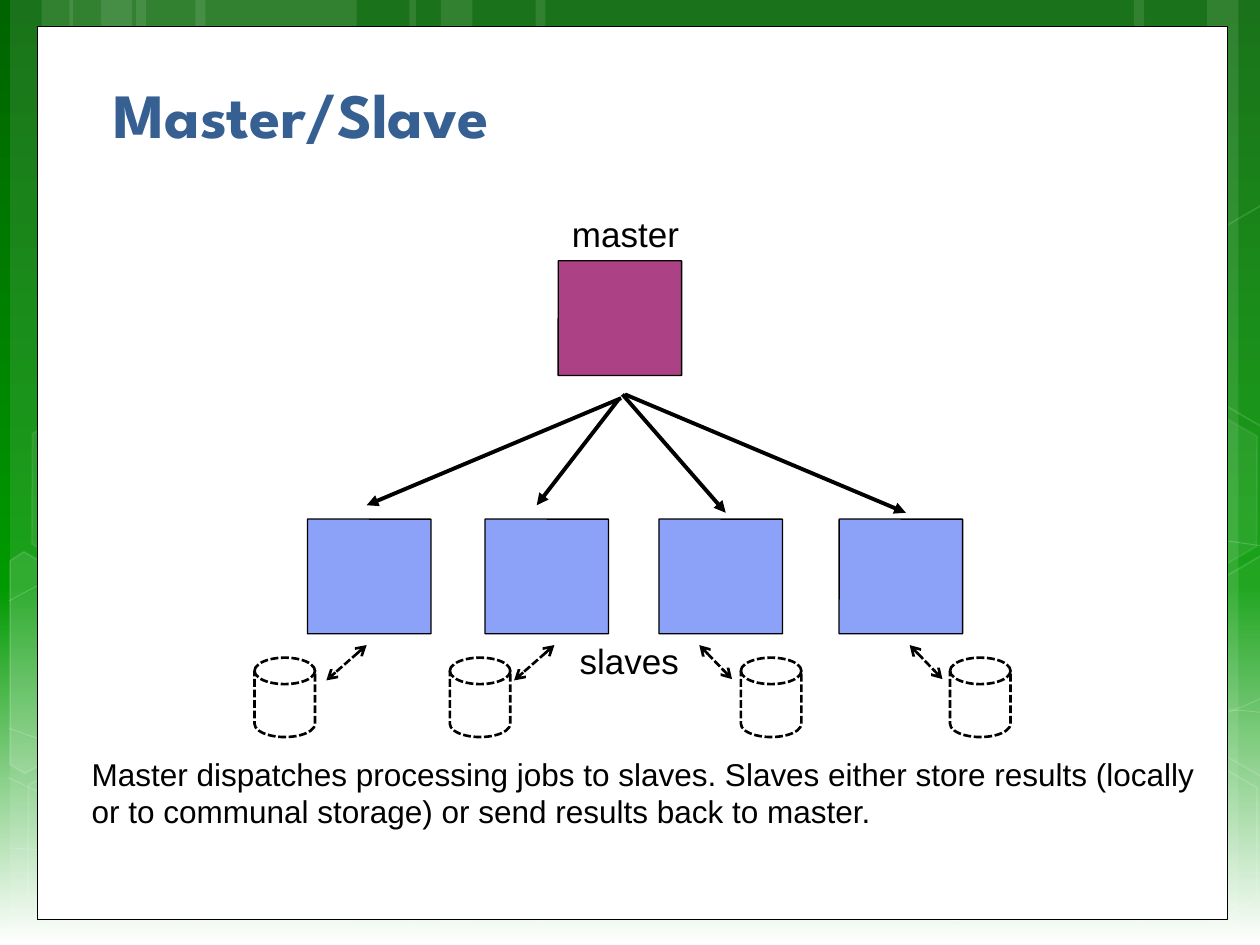
"""Build the Master/Slave architecture slide."""
from copy import deepcopy

from lxml import etree
from pptx import Presentation
from pptx.dml.color import RGBColor
from pptx.enum.dml import MSO_LINE
from pptx.enum.shapes import MSO_CONNECTOR, MSO_SHAPE
from pptx.enum.text import MSO_ANCHOR, PP_ALIGN
from pptx.oxml.ns import qn
from pptx.util import Inches, Pt

RECTANGLE = MSO_SHAPE.RECTANGLE
ROUNDED = MSO_SHAPE.ROUNDED_RECTANGLE
HEXAGON = MSO_SHAPE.HEXAGON
DISK = MSO_SHAPE.FLOWCHART_MAGNETIC_DISK
STRAIGHT = MSO_CONNECTOR.STRAIGHT
DASHED = MSO_LINE.SQUARE_DOT
LEFT, CENTER = PP_ALIGN.LEFT, PP_ALIGN.CENTER
TOP, BOTTOM = MSO_ANCHOR.TOP, MSO_ANCHOR.BOTTOM

WHITE = RGBColor(0xFF, 0xFF, 0xFF)
BLACK = RGBColor(0, 0, 0)
DARK_GREEN = RGBColor(0, 0x64, 0)
GREEN = RGBColor(0, 0x99, 0)
TITLE_BLUE = RGBColor(0x37, 0x60, 0x92)
SLAVE_BLUE = RGBColor(0x8C, 0xA1, 0xF8)
MASTER_PURPLE = RGBColor(0xAD, 0x41, 0x86)

WIDTH, HEIGHT = 10, 7.5
BOX_WIDTH, BOX_HEIGHT = 0.98, 0.91
MASTER_ROW, SLAVE_ROW, DISK_ROW = 2.07, 4.12, 5.22
SLAVE_COLUMNS = (2.44, 3.85, 5.23, 6.66)
DISK_COLUMNS = (2.02, 3.57, 5.88, 7.54)


def style(shape, fill=None, fill_alpha=100, line=None, width=1, line_alpha=100):
    shape.shadow.inherit = False
    for color, alpha, target, place in (
        (fill, fill_alpha, shape.fill, "a:solidFill/a:srgbClr"),
        (line, line_alpha, shape.line.fill, "a:ln/a:solidFill/a:srgbClr"),
    ):
        if color is None:
            target.background()
            continue
        target.solid()
        target.fore_color.rgb = color
        if alpha < 100:
            element = shape._element.spPr.xpath(place)[0]
            etree.SubElement(element, qn("a:alpha")).set("val", str(alpha * 1000))
    if line is not None:
        shape.line.width = Pt(width)


def add_arrow(start, end, width, tail, head=None, dash=None):
    connector = slide.shapes.add_connector(STRAIGHT, *map(Inches, start + end))
    connector.line.color.rgb = BLACK
    connector.line.width = Pt(width)
    if dash is not None:
        connector.line.dash_style = dash
    properties = connector._element.spPr
    line = properties.find(qn("a:ln"))
    for tag, kind in (("a:headEnd", head), ("a:tailEnd", tail)):
        if kind:
            etree.SubElement(line, qn(tag)).set("type", kind)
    etree.SubElement(properties, qn("a:effectLst"))


presentation = Presentation()
presentation.slide_width = Inches(WIDTH)
presentation.slide_height = Inches(HEIGHT)
slide = presentation.slides.add_slide(presentation.slide_layouts[6])

background = slide.background.fill
background.gradient()
background.gradient_angle = 270
stop_list = slide._element.xpath(".//a:gsLst")[0]
stop_list.append(deepcopy(stop_list[-1]))
for stop, position, color in zip(
    background.gradient_stops, (0, 0.62, 1), (DARK_GREEN, GREEN, WHITE)
):
    stop.position = position
    stop.color.rgb = color

bands = (
    (1.08, 1.75), (0.08, 0.5), (0.33, 0.83), (1.55, 1.75), (0.55, 0.5), (0.8, 0.83),
    (7.33, 1.75), (9.58, 0.5), (9, 0.83), (4.25, 3.08), (3.25, 0.5), (3.5, 0.83),
)
for left, width in bands:
    band = slide.shapes.add_shape(
        RECTANGLE, Inches(left), 0, Inches(width), Inches(HEIGHT)
    )
    style(band, WHITE, 10)

curves = (
    ((0.07, 6.73), (0.61, 6.76), (1.15, 6.79), (1.9, 6.78), (2.65, 6.77),
     (3.58, 6.75), (4.58, 6.65), (5.58, 6.55), (7, 6.36), (7.92, 6.17),
     (8.83, 5.98), (9.77, 5.68), (10.07, 5.51)),
    ((0.07, 4.77), (0.36, 4.61), (0.65, 4.46), (1.21, 4.31), (1.78, 4.16),
     (2.59, 3.94), (3.47, 3.87), (4.36, 3.8), (5.44, 3.79), (6.54, 3.87),
     (7.64, 3.95), (9.47, 4.26), (10.07, 4.34)),
    ((0.06, 6.17), (1.27, 6.72), (2.47, 7.27), (3.34, 7.49)),
    ((0.07, 5.78), (0.38, 5.89), (0.7, 6), (1.28, 6.16), (1.86, 6.31),
     (2.73, 6.56), (3.57, 6.73), (4.4, 6.9), (5.45, 7.08), (6.28, 7.18),
     (7.11, 7.29), (8, 7.33), (8.53, 7.36), (9.05, 7.4), (9.19, 7.38),
     (9.45, 7.38), (9.71, 7.37), (9.89, 7.35), (10.07, 7.34)),
    ((2.42, 7.49), (2.6, 7.29), (2.78, 7.09), (3.02, 6.91), (3.26, 6.73),
     (3.6, 6.53), (3.88, 6.39), (4.16, 6.25), (4.33, 6.19), (4.7, 6.09),
     (5.06, 5.99), (5.73, 5.85), (6.08, 5.78), (6.44, 5.71), (6.49, 5.71),
     (6.8, 5.69), (7.11, 5.66), (7.6, 5.63), (7.94, 5.62), (8.29, 5.61),
     (8.86, 5.62), (8.86, 5.62), (9.08, 5.62), (9.31, 5.62), (9.53, 5.62),
     (9.71, 5.63), (9.88, 5.64), (9.97, 5.65), (10.06, 5.66), (10.03, 5.65),
     (10.06, 5.66)),
)
for curve in curves:
    points = [tuple(map(Inches, point)) for point in curve]
    builder = slide.shapes.build_freeform(*points[0])
    builder.add_line_segments(points[1:], close=False)
    shape = builder.convert_to_shape()
    style(shape, line=WHITE, width=0.5, line_alpha=20)
    outline = shape._element.xpath(".//a:path")[0]
    segments = outline.findall(qn("a:lnTo"))
    for first in range(0, len(segments), 3):
        bezier = etree.SubElement(outline, qn("a:cubicBezTo"))
        for segment in segments[first:first + 3]:
            bezier.append(segment[0])
            outline.remove(segment)

hexagons = (
    (0.11, 5.91, 0, 12), (0.14, 3.12, 7, 8), (8.34, 5.93, 0, 12), (8.34, 3.14, 7, 8),
)
for left, top, fill_alpha, line_alpha in hexagons:
    hexagon = slide.shapes.add_shape(
        HEXAGON, Inches(left), Inches(top), Inches(1.75), Inches(1.52)
    )
    hexagon.adjustments[0] = 0.285
    hexagon.rotation = 30
    style(hexagon, WHITE if fill_alpha else None, fill_alpha, WHITE, 1, line_alpha)

cut_hexagons = (
    (10, ((0.08, 4.45), (0.19, 4.38), (0.96, 4.82), (0.95, 5.7), (0.2, 6.14), (0.08, 6.07))),
    (4, ((9.26, 4.85), (10.01, 4.41), (10.09, 4.46), (10.09, 6.13), (10.02, 6.17), (9.26, 5.73))),
    (0, ((9.26, 2.07), (10.01, 1.63), (10.1, 1.68), (10.09, 3.35), (10.02, 3.39), (9.26, 2.95))),
)
for fill_alpha, corners in cut_hexagons:
    points = [tuple(map(Inches, corner)) for corner in corners]
    builder = slide.shapes.build_freeform(*points[0])
    builder.add_line_segments(points[1:], close=True)
    style(builder.convert_to_shape(), WHITE if fill_alpha else None, fill_alpha, WHITE, 1, 12)

panel = slide.shapes.add_shape(RECTANGLE, *map(Inches, (0.3, 0.21, 9.44, 7.09)))
style(panel, WHITE, line=BLACK, width=0.5)

boxes = [(column, SLAVE_ROW, SLAVE_BLUE) for column in SLAVE_COLUMNS]
boxes.append((4.43, MASTER_ROW, MASTER_PURPLE))
for left, top, color in boxes:
    box = slide.shapes.add_shape(
        ROUNDED, *map(Inches, (left, top, BOX_WIDTH, BOX_HEIGHT))
    )
    box.adjustments[0] = 0.003
    style(box, color, line=BLACK, width=0.75)

for start, end in (
    ((4.93, 3.16), (2.91, 4.01)), ((4.91, 3.17), (4.26, 4.01)),
    ((4.94, 3.13), (5.76, 4.07)), ((4.96, 3.13), (7.19, 4.07)),
):
    add_arrow(start, end, 2.25, "triangle")

texts = (
    ("Master/Slave", (0.8, 0.49, 8.42, 0.76), "League Spartan", 36, TITLE_BLUE, LEFT, BOTTOM, 1),
    ("slaves", (2.91, 5.09, 4.17, 0.37), "Arial", 20, BLACK, CENTER, TOP, 0.81),
    ("master", (3.21, 1.7, 3.51, 0.37), "Arial", 20, BLACK, CENTER, TOP, 0.81),
    ("Master dispatches processing jobs to slaves. Slaves either store results "
     "(locally or to communal storage) or send results back to master.",
     (0.63, 5.94, 9.06, 0.71), "Arial", 18, BLACK, LEFT, TOP, 1),
)
for text, frame, font_name, size, color, alignment, anchor, spacing in texts:
    text_frame = slide.shapes.add_textbox(*map(Inches, frame)).text_frame
    text_frame.word_wrap = True
    text_frame.vertical_anchor = anchor
    text_frame.text = text
    paragraph = text_frame.paragraphs[0]
    paragraph.alignment = alignment
    paragraph.line_spacing = spacing
    font = paragraph.runs[0].font
    font.name, font.size, font.bold = font_name, Pt(size), color == TITLE_BLUE
    font.color.rgb = color

for left in DISK_COLUMNS:
    disk = slide.shapes.add_shape(DISK, *map(Inches, (left, DISK_ROW, 0.48, 0.63)))
    style(disk, line=BLACK, width=1.5)
    disk.line.dash_style = DASHED

for start, end, bottom in (
    (2.91, 2.59, 5.4), (4.4, 4.08, 5.4), (5.55, 5.81, 5.39), (7.22, 7.48, 5.39)
):
    add_arrow((start, 5.12), (end, bottom), 1.5, "arrow", "arrow", DASHED)

presentation.save("out.pptx")
